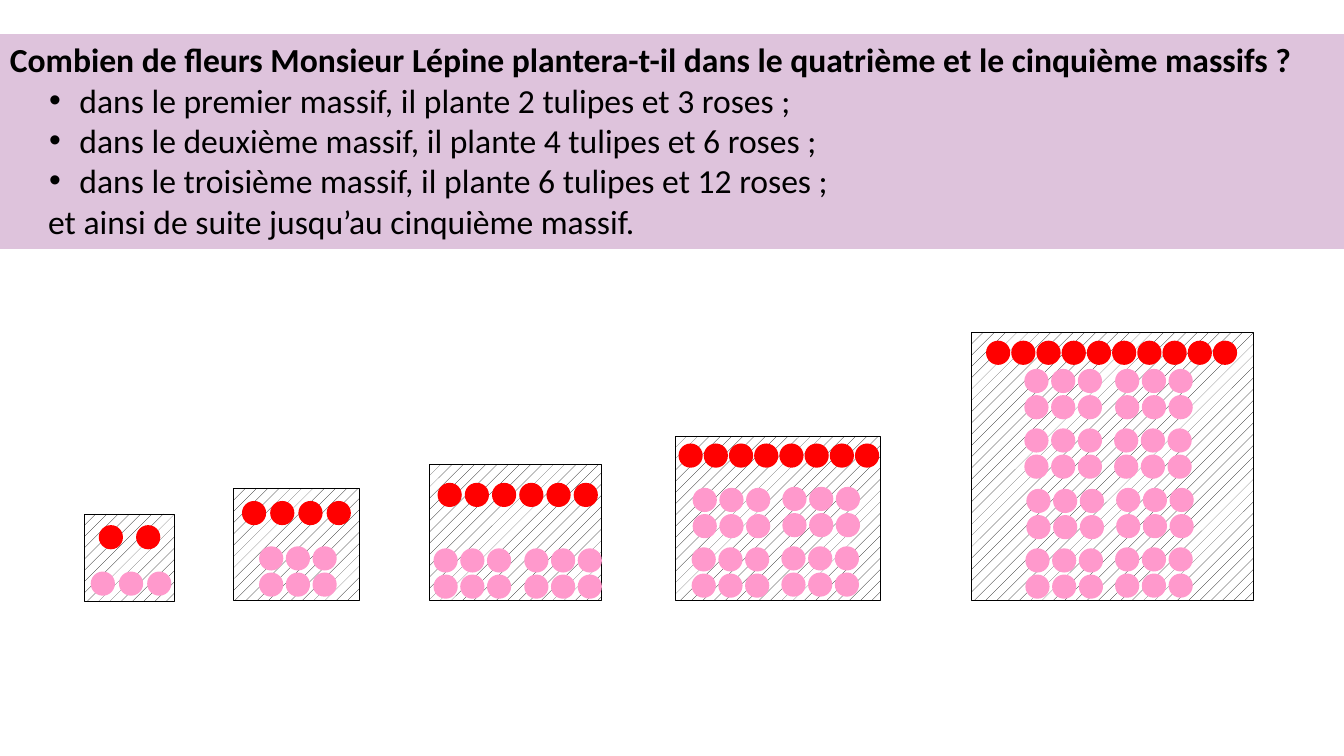
from pptx import Presentation
from pptx.dml.color import RGBColor
from pptx.enum.dml import MSO_PATTERN
from pptx.enum.shapes import MSO_SHAPE
from pptx.enum.text import MSO_ANCHOR, PP_ALIGN
from pptx.oxml.xmlchemy import OxmlElement
from pptx.util import Inches, Pt

QUESTION = "Combien de fleurs Monsieur Lépine plantera-t-il dans le quatrième et le cinquième massifs ?"
RULES = [
    "dans le premier massif, il plante 2 tulipes et 3 roses ;",
    "dans le deuxième massif, il plante 4 tulipes et 6 roses ;",
    "dans le troisième massif, il plante 6 tulipes et 12 roses ;",
]
ENDING = "et ainsi de suite jusqu’au cinquième massif."

BLACK, WHITE, LILAC = "000000", "FFFFFF", "DEC3DC"
TULIP_RED, ROSE_PINK = "FF0000", "FF99CC"
FLOWER_SIZE = 0.24
ROSE_STEP = 0.265
ROSE_ROW_STEP = 0.26

BEDS = [
    (0.84, 5.1, 0.89, 0.87),
    (2.32, 4.85, 1.25, 1.11),
    (4.26, 4.61, 1.71, 1.35),
    (6.7, 4.33, 2.03, 1.63),
    (9.64, 3.3, 2.79, 2.66),
]
TULIP_ROWS = [
    (0.98, 5.21, 2, 0.37),
    (2.4, 4.97, 4, 0.28),
    (4.34, 4.79, 6, 0.27),
    (6.73, 4.4, 8, 0.25),
    (9.78, 3.38, 10, 0.25),
]
ROSE_ROW = (0.9, 5.67, 3, 0.28)
ROSE_BLOCKS = [
    (2.57, 5.42),
    (4.3, 5.44), (5.2, 5.44),
    (6.86, 5.43), (7.75, 5.42),
    (6.87, 4.84), (7.76, 4.83),
    (10.17, 5.44), (11.06, 5.43),
    (10.18, 4.85), (11.07, 4.84),
    (10.16, 4.25), (11.05, 4.25),
    (10.16, 3.66), (11.06, 3.66),
]


def color(value):
    return RGBColor.from_string(value)


def add_shape(kind, left, top, width, height, fill=None):
    shape = slide.shapes.add_shape(kind, Inches(left), Inches(top), Inches(width), Inches(height))
    shape.shadow.inherit = False
    if fill:
        shape.fill.solid()
        shape.fill.fore_color.rgb = color(fill)
    return shape


def add_bed(left, top, width, height):
    bed = add_shape(MSO_SHAPE.RECTANGLE, left, top, width, height)
    bed.fill.patterned()
    bed.fill.pattern = MSO_PATTERN.PERCENT_10
    bed.fill.fore_color.rgb = color(BLACK)
    bed.fill.back_color.rgb = color(WHITE)
    bed.line.color.rgb = color(BLACK)
    bed.line.width = Pt(0.75)


def add_flower_row(left, top, count, step, fill):
    for index in range(count):
        flower = add_shape(MSO_SHAPE.OVAL, left + index * step, top, FLOWER_SIZE, FLOWER_SIZE, fill)
        flower.line.fill.background()


def indent(paragraph, margin, first_line=0, bullet=None):
    properties = paragraph._p.get_or_add_pPr()
    properties.set("marL", str(Inches(margin)))
    properties.set("indent", str(Inches(first_line)))
    if bullet:
        font = OxmlElement("a:buFont")
        font.set("typeface", "Arial")
        character = OxmlElement("a:buChar")
        character.set("char", bullet)
        properties.extend([font, character])


def add_statement():
    panel = add_shape(MSO_SHAPE.RECTANGLE, 0, 0.34, 13.33, 2.12, LILAC)
    panel.line.color.rgb = color(LILAC)
    panel.line.width = Pt(1)
    frame = panel.text_frame
    frame.word_wrap = True
    frame.vertical_anchor = MSO_ANCHOR.TOP
    for index, text in enumerate([QUESTION, *RULES, ENDING]):
        paragraph = frame.paragraphs[0] if index == 0 else frame.add_paragraph()
        paragraph.text = text
        paragraph.alignment = PP_ALIGN.LEFT
        if text in RULES:
            indent(paragraph, 0.69, -0.3, "•")
        elif text == ENDING:
            indent(paragraph, 0.38)
        paragraph.font.name = "Calibri"
        paragraph.font.size = Pt(24)
        paragraph.font.bold = text == QUESTION
        paragraph.font.color.rgb = color(BLACK)


presentation = Presentation()
presentation.slide_width = Inches(13.33)
presentation.slide_height = Inches(7.5)
slide = presentation.slides.add_slide(presentation.slide_layouts[6])

add_statement()
for bed_box in BEDS:
    add_bed(*bed_box)
for tulip_row in TULIP_ROWS:
    add_flower_row(*tulip_row, TULIP_RED)
add_flower_row(*ROSE_ROW, ROSE_PINK)
for block_left, block_top in ROSE_BLOCKS:
    for row in range(2):
        add_flower_row(block_left, block_top + row * ROSE_ROW_STEP, 3, ROSE_STEP, ROSE_PINK)

presentation.save("out.pptx")
